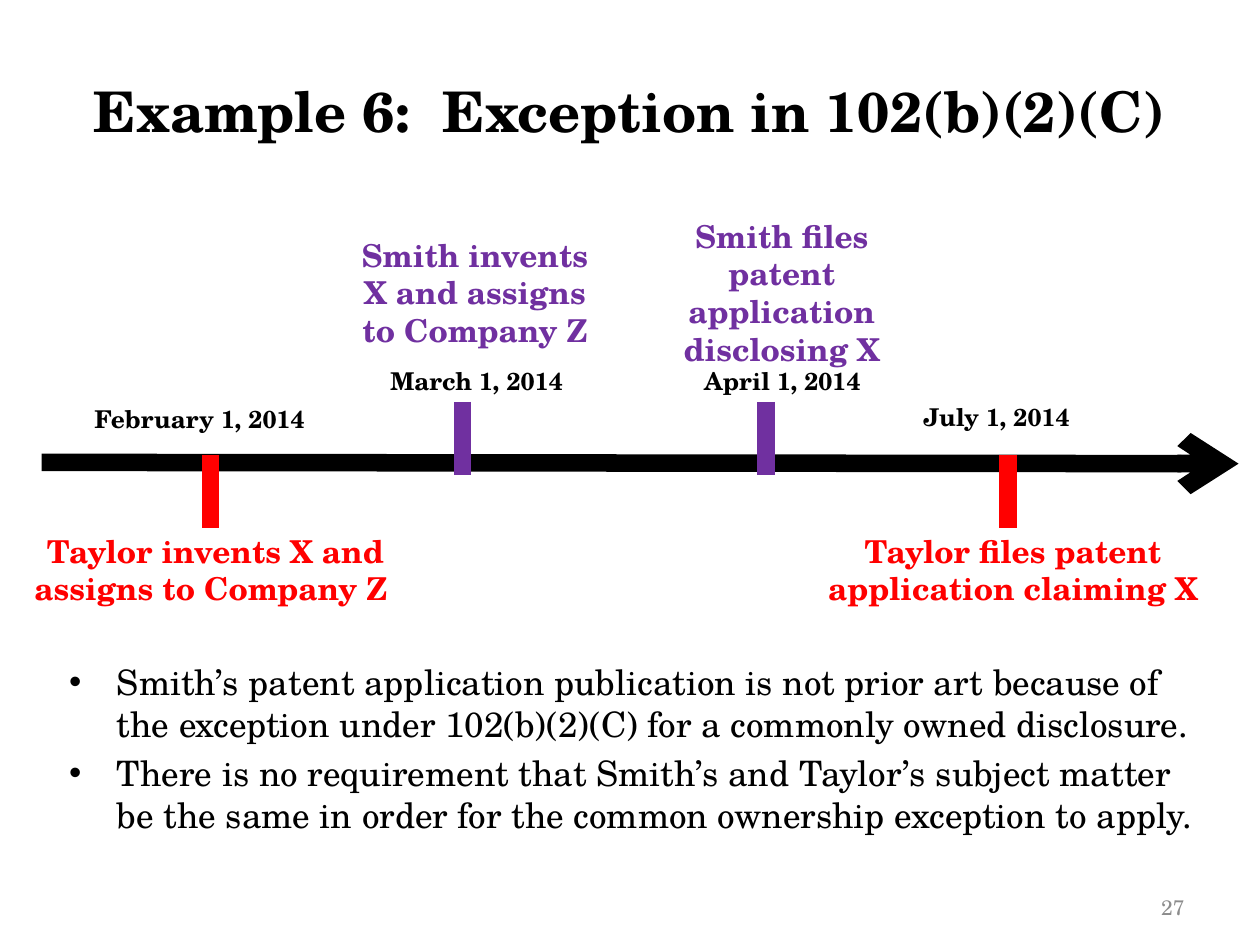
from lxml import etree
from pptx import Presentation
from pptx.dml.color import RGBColor
from pptx.enum.shapes import MSO_CONNECTOR
from pptx.enum.text import MSO_ANCHOR, PP_ALIGN
from pptx.oxml.ns import qn
from pptx.util import Inches, Pt

FONT = "TeX Gyre Schola"
COLORS = {"black": "000000", "taylor": "FF0000", "smith": "7030A0", "number": "8C8C8C"}

deck = Presentation()
deck.slide_width, deck.slide_height = Inches(10), Inches(7.5)
page = deck.slides.add_slide(deck.slide_layouts[5])


def write(box, place, lines, size, color="black", bold=True,
          align=PP_ALIGN.LEFT, anchor=MSO_ANCHOR.TOP):
    """Place a box and fill it with one paragraph per line."""
    box.left, box.top, box.width, box.height = map(Inches, place)
    frame = box.text_frame
    frame.word_wrap = True
    frame.vertical_anchor = anchor
    frame.text = "\n".join(lines)
    for para in frame.paragraphs:
        para.alignment = align
        para.font.name = FONT
        para.font.size = Pt(size)
        para.font.bold = bold
        para.font.color.rgb = RGBColor.from_string(COLORS[color])
    return frame


def draw_line(x1, y1, x2, y2, color):
    line = page.shapes.add_connector(
        MSO_CONNECTOR.STRAIGHT, Inches(x1), Inches(y1), Inches(x2), Inches(y2))
    line.line.width = Pt(10)
    line.line.color.rgb = RGBColor.from_string(COLORS[color])
    etree.SubElement(line._element.spPr, qn("a:effectLst"))
    return line


write(page.shapes.title, (0, 0.25, 10, 1.25), ["Example 6:  Exception in 102(b)(2)(C)"], 32,
      align=PP_ALIGN.CENTER, anchor=MSO_ANCHOR.MIDDLE)

# Timeline
timeline = draw_line(0.33, 3.67, 9.83, 3.68, "black")
etree.SubElement(timeline.line._get_or_add_ln(), qn("a:tailEnd"), type="arrow")

# Events: owner, tick x, tick top, date, date place, caption lines, caption place
events = [
    ("taylor", 1.67, 3.61, "February 1, 2014", (0.65, 3.16, 2.12, 0.34),
     ["Taylor invents X and assigns to Company Z "], (0.17, 4.17, 3.08, 0.71)),
    ("smith", 3.67, 3.19, "March 1, 2014", (3, 2.86, 1.77, 0.34),
     ["Smith invents X and assigns to Company Z "], (2.77, 1.82, 2, 1.01)),
    ("smith", 6.08, 3.19, "April 1, 2014", (5.49, 2.86, 1.69, 0.34),
     ["Smith files patent application disclosing X"], (5.04, 1.67, 2.33, 1.01)),
    ("taylor", 8, 3.61, "July 1, 2014", (7.23, 3.14, 1.54, 0.34),
     ["Taylor files patent", "application claiming X"], (5.75, 4.17, 4.58, 0.71)),
]
for owner, x, top, date, date_place, caption, caption_place in events:
    draw_line(x, top, x, top + 0.58, owner)
    write(page.shapes.add_textbox(0, 0, 0, 0), date_place, [date], 14)
    write(page.shapes.add_textbox(0, 0, 0, 0), caption_place, caption, 18, owner,
          align=PP_ALIGN.CENTER)

# Conclusions
conclusions = write(page.shapes.add_textbox(0, 0, 0, 0), (0.45, 5.19, 9.19, 1.81), [
    "Smith’s patent application publication is not prior art because of the exception "
    "under 102(b)(2)(C) for a commonly owned disclosure.",
    "There is no requirement that Smith’s and Taylor’s subject matter be the same in "
    "order for the common ownership exception to apply.",
], 20, bold=False)
for para in conclusions.paragraphs:
    props = para._p.get_or_add_pPr()
    props.set("marL", str(Inches(0.38)))
    props.set("indent", str(-Inches(0.38)))
    bullet_font = etree.Element(qn("a:buFont"), typeface="Arial")
    bullet = etree.Element(qn("a:buChar"), char="•")
    props.insert(0, bullet_font)
    props.insert(1, bullet)
conclusions.paragraphs[1].space_before = Pt(4)

write(page.shapes.add_textbox(0, 0, 0, 0), (7.17, 6.83, 2.33, 0.52), ["27"], 12, "number",
      bold=False, align=PP_ALIGN.RIGHT, anchor=MSO_ANCHOR.BOTTOM)

deck.save("out.pptx")
